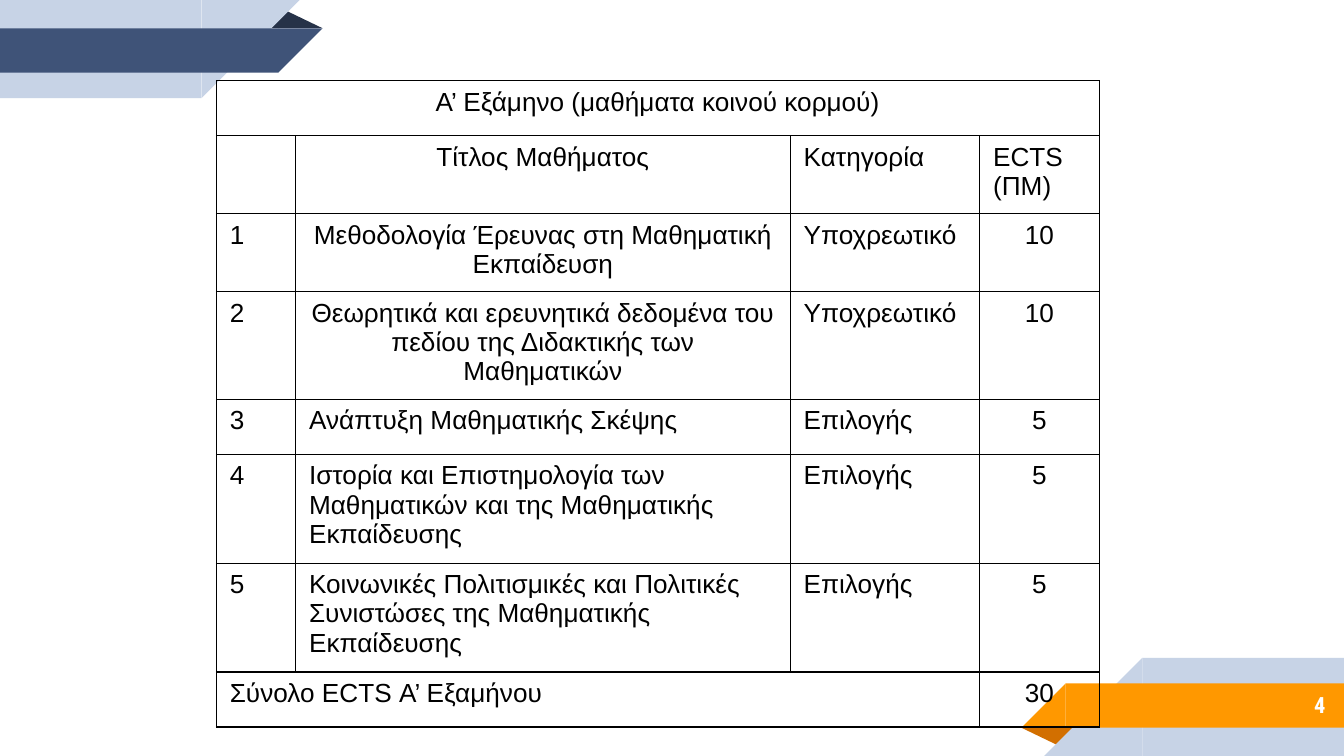
from lxml import etree
from pptx import Presentation
from pptx import util as u
from pptx.dml.color import RGBColor
from pptx.enum import shapes, text
from pptx.oxml import ns

WIDTH = 10
HEIGHT = WIDTH * 9 / 16
COLORS = {"pale": "C7D3E6", "navy": "3F5378", "navy_fold": "263248",
          "orange": "FF9800", "orange_fold": "D26F00",
          "ink": "000000", "white": "FFFFFF"}
COURSES = [
    ("Α’ Εξάμηνο (μαθήματα κοινού κορμού)", "", "", ""),
    ("", "Τίτλος Μαθήματος", "Κατηγορία", "ECTS (ΠΜ)"),
    ("1", "Μεθοδολογία Έρευνας στη Μαθηματική Εκπαίδευση", "Υποχρεωτικό", "10"),
    ("2", "Θεωρητικά και ερευνητικά δεδομένα του πεδίου της Διδακτικής των Μαθηματικών",
     "Υποχρεωτικό", "10"),
    ("3", "Ανάπτυξη Μαθηματικής Σκέψης", "Επιλογής", "5"),
    ("4", "Ιστορία και Επιστημολογία των Μαθηματικών και της Μαθηματικής Εκπαίδευσης",
     "Επιλογής", "5"),
    ("5", "Κοινωνικές Πολιτισμικές και Πολιτικές Συνιστώσες της Μαθηματικής Εκπαίδευσης",
     "Επιλογής", "5"),
    ("Σύνολο ECTS Α’ Εξαμήνου", "", "", "30"),
]
COLUMN_WIDTHS = [0.59, 3.68, 1.41, 0.89]
ROW_HEIGHTS = [0.41, 0.58, 0.58, 0.58, 0.41, 0.81, 0.81, 0.41]
MERGES = [((0, 0), (0, 3)), ((7, 0), (7, 2))]
CENTERED = {(0, 0), (1, 1), (2, 1), (3, 1)} | {(row, 3) for row in range(2, 8)}
PAGE_NUMBER = "4"
FOLD = (1.97, 0.07, 0.43, 0.14)
BANDS = [(0, 0.73, 1.5), (0.21, 0.33, 2.07)]


def color(name):
    return RGBColor.from_string(COLORS[name])


def add_ribbon_part(slide, kind, box, fill, at_bottom, rotated, flipped):
    left, top, width, height = box
    if at_bottom:
        left, top = WIDTH - left - width, HEIGHT - top - height
    shape = slide.shapes.add_shape(kind, *map(u.Inches, (left, top, width, height)))
    shape.shadow.inherit = False
    shape.fill.solid()
    shape.fill.fore_color.rgb = color(fill)
    shape.line.fill.background()
    shape.rotation = 180 if rotated else 0
    if flipped:
        shape._element.spPr.xfrm.set("flipH", "1")
    return shape


def add_ribbon(slide, main, fold, at_bottom):
    kinds = shapes.MSO_SHAPE
    triangle = add_ribbon_part(slide, kinds.ISOSCELES_TRIANGLE, FOLD, fold,
                               at_bottom, at_bottom, False)
    triangle.adjustments[0] = 0.324
    for (top, height, length), fill in zip(BANDS, ("pale", main)):
        for kind, left, width in ((kinds.RECTANGLE, 0, length),
                                  (kinds.RIGHT_TRIANGLE, length, height)):
            add_ribbon_part(slide, kind, (left, top, width, height), fill,
                            at_bottom, not at_bottom, True)


def format_text(paragraph, font, size, fill, bold, alignment):
    paragraph.alignment = alignment
    for run in paragraph.runs:
        run.font.name = font
        run.font.size = u.Pt(size)
        run.font.bold = bold
        run.font.color.rgb = color(fill)


def add_borders(cell):
    properties = cell._tc.get_or_add_tcPr()
    for side in ("lnL", "lnR", "lnT", "lnB"):
        line = etree.SubElement(properties, ns.qn("a:" + side), w=str(u.Pt(0.75)))
        fill = etree.SubElement(line, ns.qn("a:solidFill"))
        etree.SubElement(fill, ns.qn("a:srgbClr"), val=COLORS["ink"])


def add_page_number(slide):
    box = slide.shapes.add_textbox(*map(u.Inches, (8.33, 5.07, 1.63, 0.35)))
    frame = box.text_frame
    frame.word_wrap = True
    frame.vertical_anchor = text.MSO_ANCHOR.MIDDLE
    frame.margin_left = frame.margin_right = u.Inches(0.1)
    frame.margin_top = frame.margin_bottom = u.Inches(0.1)
    frame.text = PAGE_NUMBER
    format_text(frame.paragraphs[0], "Roboto Condensed", 12, "white", True,
                text.PP_ALIGN.RIGHT)


def add_course_table(slide):
    size = (sum(COLUMN_WIDTHS), sum(ROW_HEIGHTS))
    table = slide.shapes.add_table(len(ROW_HEIGHTS), len(COLUMN_WIDTHS),
                                   *map(u.Inches, (1.61, 0.6, *size))).table
    table.first_row = table.horz_banding = False
    for column, width in zip(table.columns, COLUMN_WIDTHS):
        column.width = u.Inches(width)
    for row, height in zip(table.rows, ROW_HEIGHTS):
        row.height = u.Inches(height)
    for start, end in MERGES:
        table.cell(*start).merge(table.cell(*end))
    for row, values in enumerate(COURSES):
        for column, value in enumerate(values):
            cell = table.cell(row, column)
            add_borders(cell)
            cell.fill.background()
            if value:
                cell.text_frame.text = value
                centered = (row, column) in CENTERED
                alignment = text.PP_ALIGN.CENTER if centered else text.PP_ALIGN.LEFT
                format_text(cell.text_frame.paragraphs[0], "Arial", 14, "ink",
                            False, alignment)


def main():
    presentation = Presentation()
    presentation.slide_width = u.Inches(WIDTH)
    presentation.slide_height = u.Inches(HEIGHT)
    slide = presentation.slides.add_slide(presentation.slide_layouts[6])
    slide.background.fill.solid()
    slide.background.fill.fore_color.rgb = color("white")
    add_ribbon(slide, "orange", "orange_fold", True)
    add_ribbon(slide, "navy", "navy_fold", False)
    add_page_number(slide)
    add_course_table(slide)
    presentation.save("out.pptx")


if __name__ == "__main__":
    main()
